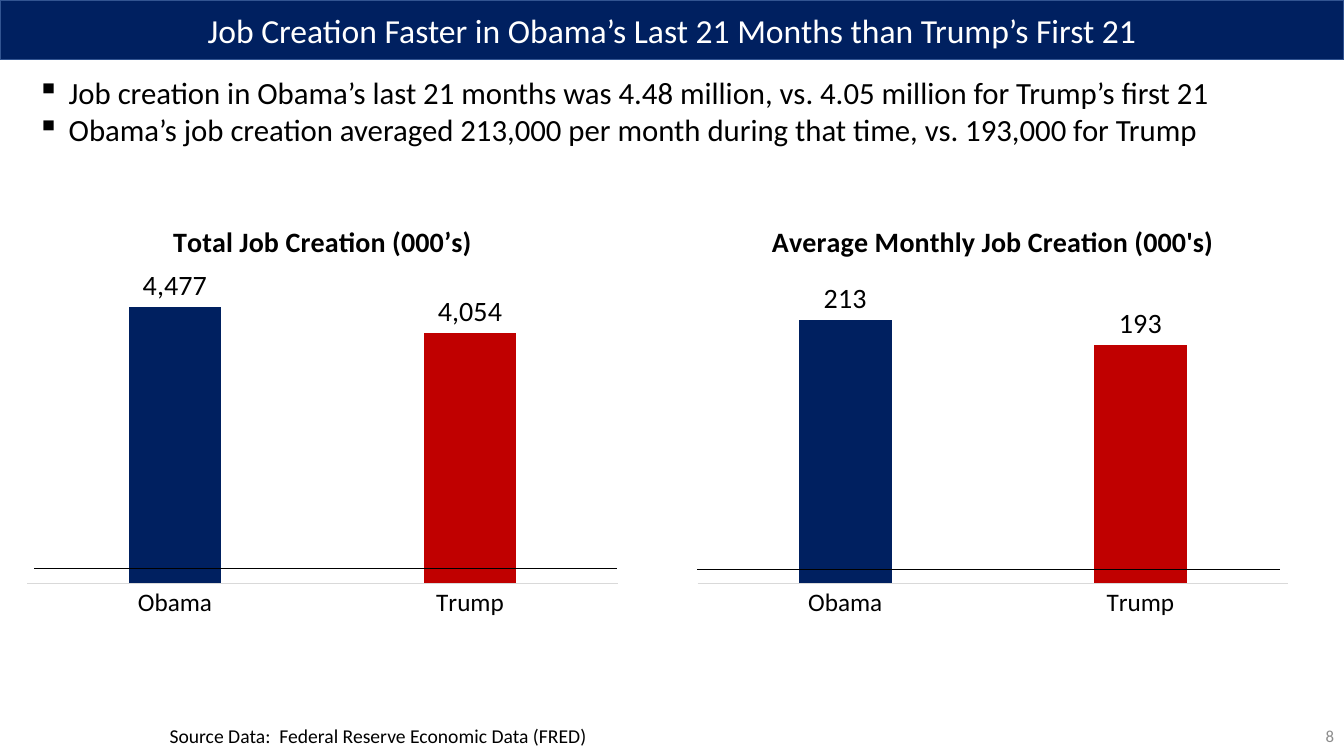
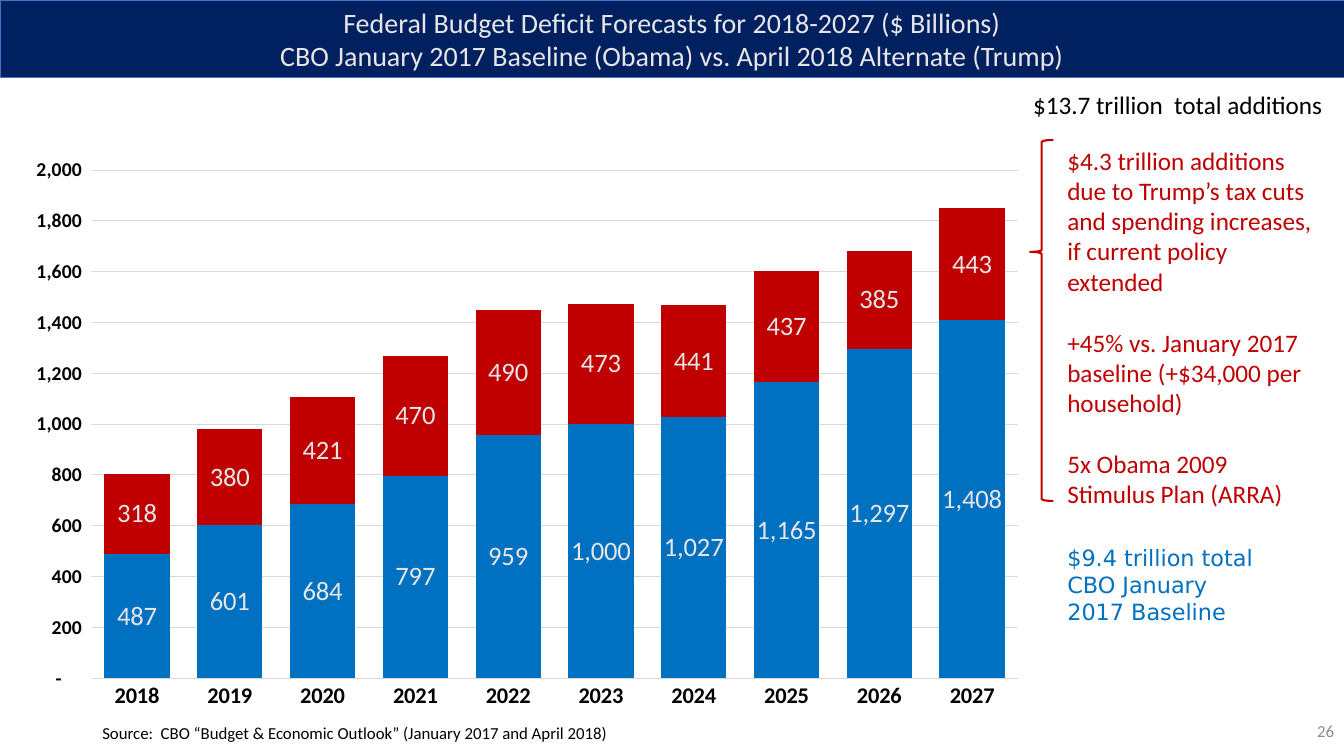
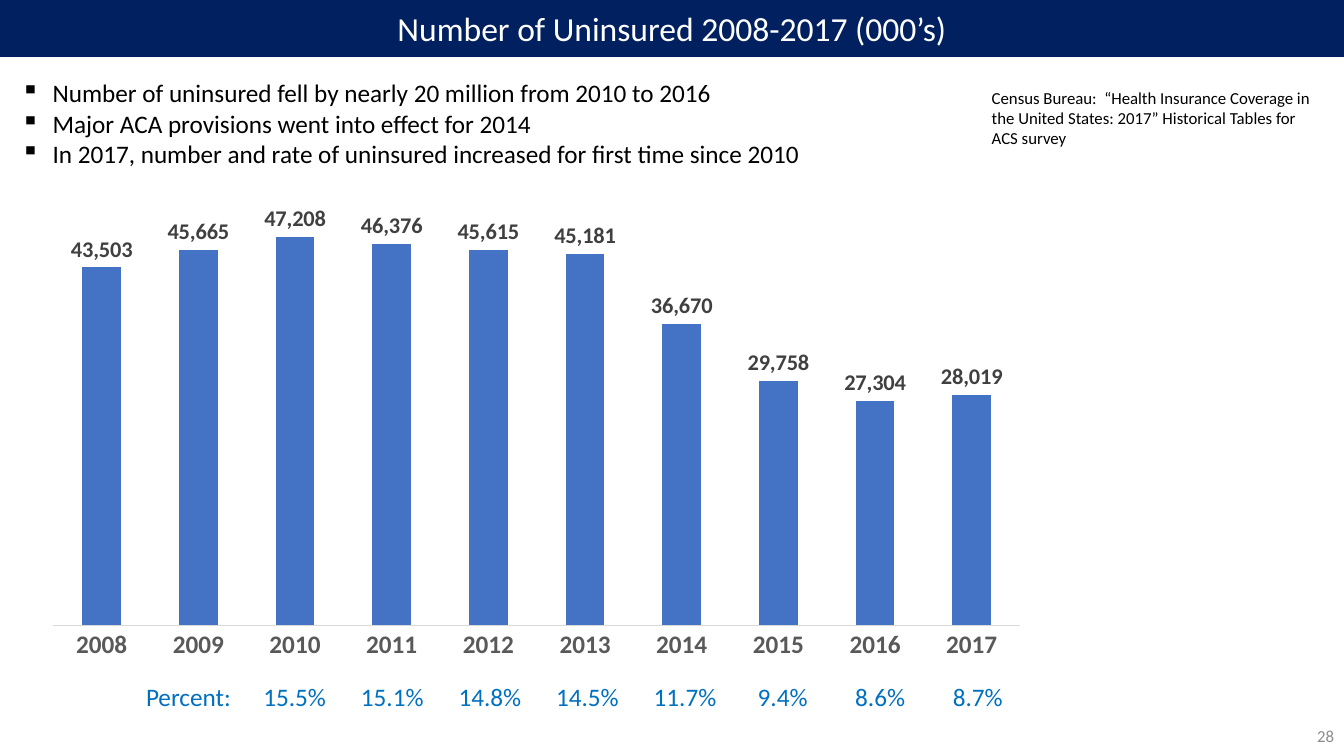
import lxml.etree
import pptx
import pptx.chart.data
import pptx.dml.color
import pptx.enum.chart
import pptx.enum.shapes
import pptx.enum.text
import pptx.oxml.ns
import pptx.util

Pt = pptx.util.Pt
qn = pptx.oxml.ns.qn
ALIGN = pptx.enum.text.PP_ALIGN
ANCHOR = pptx.enum.text.MSO_ANCHOR
CHART = pptx.enum.chart.XL_CHART_TYPE
LABEL = pptx.enum.chart.XL_LABEL_POSITION
SHAPE = pptx.enum.shapes.MSO_SHAPE


class Deck:
    """Shared style and the slide being built, with lengths in points."""

    colors = {
        "navy": "002060", "red": "C00000", "blue": "0070C0", "bar": "4472C4",
        "edge": "325491", "white": "FFFFFF", "black": "000000", "pale": "E7E6E6",
        "rule": "D9D9D9", "number": "8C8C8C", "label": "404040", "axis": "595959",
    }
    font = "Calibri"
    accounting = '_(* #,##0_);_(* \\(#,##0\\);_(* "-"??_);_('

    def __init__(self):
        self.prs = pptx.Presentation()
        self.prs.slide_width, self.prs.slide_height = Pt(960), Pt(540)
        self.slide = None

    def rgb(self, color):
        return pptx.dml.color.RGBColor.from_string(self.colors[color])

    def style(self, font, size, color, bold=False, face=None):
        font.name, font.size, font.bold = face or self.font, Pt(size), bold
        font.color.rgb = self.rgb(color)

    def paint(self, fill, color):
        fill.solid()
        fill.fore_color.rgb = self.rgb(color)

    def stroke(self, line, color, width):
        line.color.rgb, line.width = self.rgb(color), Pt(width)

    def add_lines(self, frame, lines, size, color, align=ALIGN.LEFT, face=None, gap=0,
                  bullet=None):
        for i, line in enumerate(lines):
            para = frame.paragraphs[0] if i == 0 else frame.add_paragraph()
            para.alignment = align
            para.space_before = Pt(gap if i else 0)
            run = para.add_run()
            run.text = line
            self.style(run.font, size, color, face=face)
            if bullet:
                props = para._p.get_or_add_pPr()
                props.set("marL", str(Pt(22.5)))
                props.set("indent", str(Pt(-22.5)))
                lxml.etree.SubElement(props, qn("a:buChar")).set("char", bullet)

    def start(self, lines, height, number, size=24, color="white", edge="navy", edge_width=1,
              number_top=511):
        self.slide = self.prs.slides.add_slide(self.prs.slide_layouts[6])
        band = self.shape(SHAPE.RECTANGLE, 0, 0, 960, height, edge, edge_width)
        self.paint(band.fill, "navy")
        band.text_frame.vertical_anchor = ANCHOR.MIDDLE
        self.add_lines(band.text_frame, lines, size, color, ALIGN.CENTER)
        self.text(744, number_top, 216, 29, [str(number)], 12, "number",
                  align=ALIGN.RIGHT, anchor=ANCHOR.MIDDLE)

    def shape(self, kind, left, top, width, height, edge, edge_width):
        shape = self.slide.shapes.add_shape(kind, Pt(left), Pt(top), Pt(width), Pt(height))
        shape.shadow.inherit = False
        self.stroke(shape.line, edge, edge_width)
        return shape

    def brace(self, left, top, width, height, color, middle):
        brace = self.shape(SHAPE.LEFT_BRACE, left, top, width, height, color, 1.5)
        brace.fill.background()
        brace.adjustments[0], brace.adjustments[1] = 0.08, middle

    def text(self, left, top, width, height, lines, size, color="black", wrap=True,
             anchor=ANCHOR.TOP, **options):
        box = self.slide.shapes.add_textbox(Pt(left), Pt(top), Pt(width), Pt(height))
        box.text_frame.word_wrap = wrap
        box.text_frame.vertical_anchor = anchor
        self.add_lines(box.text_frame, lines, size, color, **options)

    def line(self, left, right, y):
        line = self.slide.shapes.add_connector(
            pptx.enum.shapes.MSO_CONNECTOR.STRAIGHT, Pt(left), Pt(y), Pt(right), Pt(y))
        self.stroke(line.line, "black", 1)
        lxml.etree.SubElement(line.element.spPr, qn("a:effectLst"))

    def columns(self, box, plot_area, categories, series, top_value, gap, label, category,
                overlap=0, title=None, point_colors=(), value_step=None):
        data = pptx.chart.data.CategoryChartData(number_format="#,##0")
        data.categories = categories
        for name, values, _ in series:
            data.add_series(name, values)
        kind = CHART.COLUMN_STACKED if len(series) > 1 else CHART.COLUMN_CLUSTERED
        chart = self.slide.shapes.add_chart(kind, *map(Pt, box), data).chart
        self.style(chart.font, 10, "black")
        chart.has_legend = False
        chart.has_title = bool(title)
        if title:
            run = chart.chart_title.text_frame.paragraphs[0].add_run()
            run.text = title
            self.style(run.font, 20, "black", True)
        self.axes(chart, top_value, category, value_step)
        self.place_plot(chart, plot_area)

        plot = chart.plots[0]
        plot.vary_by_categories = False
        plot.gap_width, plot.overlap = gap, overlap
        plot.has_data_labels = True
        labels = plot.data_labels
        labels.show_value = True
        labels.number_format, labels.number_format_is_linked = "#,##0", False
        labels.position = LABEL.CENTER if len(series) > 1 else LABEL.OUTSIDE_END
        self.style(labels.font, *label)
        for drawn, (_, _, color) in zip(plot.series, series):
            drawn.invert_if_negative = False
            self.paint(drawn.format.fill, color)
            for i, point_color in enumerate(point_colors):
                self.paint(drawn.points[i].format.fill, point_color)

    def axes(self, chart, top_value, category, value_step):
        no_tick = pptx.enum.chart.XL_TICK_MARK.NONE
        across, up = chart.category_axis, chart.value_axis
        across.major_tick_mark = up.major_tick_mark = no_tick
        self.style(across.tick_labels.font, *category)
        self.stroke(across.format.line, "rule", 0.75)
        up.minimum_scale, up.maximum_scale = 0, top_value
        up.has_major_gridlines = up.visible = bool(value_step)
        if value_step:
            up.major_unit = value_step
            up.format.line.fill.background()
            self.stroke(up.major_gridlines.format.line, "rule", 0.75)
            up.tick_labels.number_format = self.accounting
            up.tick_labels.number_format_is_linked = False
            self.style(up.tick_labels.font, 14, "black", True)

    def place_plot(self, chart, plot_area):
        area = chart.element.find(".//" + qn("c:plotArea"))
        for old in area.findall(qn("c:layout")):
            area.remove(old)
        layout = lxml.etree.Element(qn("c:layout"))
        area.insert(0, layout)
        manual = lxml.etree.SubElement(layout, qn("c:manualLayout"))
        settings = [("layoutTarget", "inner"), ("xMode", "edge"), ("yMode", "edge")]
        for tag, value in settings + list(zip("xywh", plot_area)):
            lxml.etree.SubElement(manual, qn("c:" + tag)).set("val", str(value))


def job_creation(deck):
    deck.start(["Job Creation Faster in Obama’s Last 21 Months than Trump’s First 21"],
               42.5, 8, edge="edge")
    deck.text(114, 513.5, 315, 24.5, ["Source Data:  Federal Reserve Economic Data (FRED)"],
              14, wrap=False)
    deck.text(19.5, 49, 869, 60.5, [
        "Job creation in Obama’s last 21 months was 4.48 million, vs. 4.05 million for Trump’s first 21",
        "Obama’s job creation averaged 213,000 per month during that time, vs. 193,000 for Trump",
    ], 22, wrap=False, bullet="▪")
    panels = [
        (10.8, "Total Job Creation (000’s)", (4477, 4054), 5000),
        (489.6, "Average Monthly Job Creation (000's)", (213, 193), 250),
    ]
    for left, title, jobs, top_value in panels:
        deck.columns((left, 144.7, 439.2, 302.4), (0.02, 0.17, 0.96, 0.73),
                     ["Obama", "Trump"], [("Jobs", jobs, "bar")], top_value, 219,
                     (20, "black"), (18, "black"), overlap=-27, title=title,
                     point_colors=("navy", "red"))
    for left, y in ((24.5, 406), (498.2, 406.8)):
        deck.line(left, left + 416, y)


def budget_deficit(deck):
    deck.start(["Federal Budget Deficit Forecasts for 2018-2027 ($ Billions)",
                "CBO January 2017 Baseline (Obama) vs. April 2018 Alternate (Trump)"],
               55.5, 26, size=20, color="pale", edge="bar", edge_width=0.5, number_top=507.6)
    baseline = (487, 601, 684, 797, 959, 1000, 1027, 1165, 1297, 1408)
    additions = (318, 380, 421, 470, 490, 473, 441, 437, 385, 443)
    deck.columns((5.8, 105, 736.5, 412.5), (0.08, 0.04, 0.9, 0.88),
                 [str(year) for year in range(2018, 2028)],
                 [("Baseline", baseline, "blue"), ("Additions", additions, "red")],
                 2000, 42, (19, "pale"), (16, "black", True), overlap=100, value_step=200)
    deck.text(755.3, 385.2, 156, 65.5, ["$9.4 trillion total", "CBO January 2017 Baseline"],
              16, "blue", face="DejaVu Sans")
    deck.text(755.3, 100, 194.4, 269, [
        "$4.3 trillion additions due to Trump’s tax cuts and spending increases, if current policy extended",
        "+45% vs. January 2017 baseline (+$34,000 per household)",
        "5x Obama 2009 Stimulus Plan (ARRA)",
    ], 18, "red", gap=22)
    deck.brace(735.8, 100, 16.6, 257.8, "red", 0.31)
    deck.text(66, 512.6, 380, 21.6,
              ["Source:  CBO “Budget & Economic Outlook” (January 2017 and April 2018)"],
              12, wrap=False)
    deck.text(730.8, 60.5, 223, 29, ["$13.7 trillion  total additions"], 18, wrap=False)


def uninsured(deck):
    deck.start(["Number of Uninsured 2008-2017 (000’s)"], 40.5, 28)
    people = (43503, 45665, 47208, 46376, 45615, 45181, 36670, 29758, 27304, 28019)
    deck.columns((23.8, 146.2, 719.3, 334), (0.02, 0.02, 0.96, 0.88),
                 [str(year) for year in range(2008, 2018)], [("Uninsured", people, "bar")],
                 50000, 150, (16, "label", True), (18, "axis", True))
    deck.text(8, 52, 573, 72.7, [
        "Number of uninsured fell by nearly 20 million from 2010 to 2016",
        "Major ACA provisions went into effect for 2014",
        "In 2017, number and rate of uninsured increased for first time since 2010",
    ], 18, wrap=False, bullet="▪")
    percent_top = 483
    deck.text(97.2, percent_top, 75.6, 29, ["Percent:"], 18, "blue", wrap=False)
    rates = ("15.5%", "15.1%", "14.8%", "14.5%", "11.7%", "9.4%", "8.6%", "8.7%")
    for i, rate in enumerate(rates):
        deck.text(180.5 + 69.7 * i, percent_top, 60, 29, [rate], 18, "blue", wrap=False,
                  align=ALIGN.CENTER)
    deck.text(701.3, 59, 250.6, 51, [
        "Census Bureau:  “Health Insurance Coverage in the United States: 2017” "
        "Historical Tables for ACS survey"], 12)


def main():
    deck = Deck()
    job_creation(deck)
    budget_deficit(deck)
    uninsured(deck)
    deck.prs.save("out.pptx")


if __name__ == "__main__":
    main()
